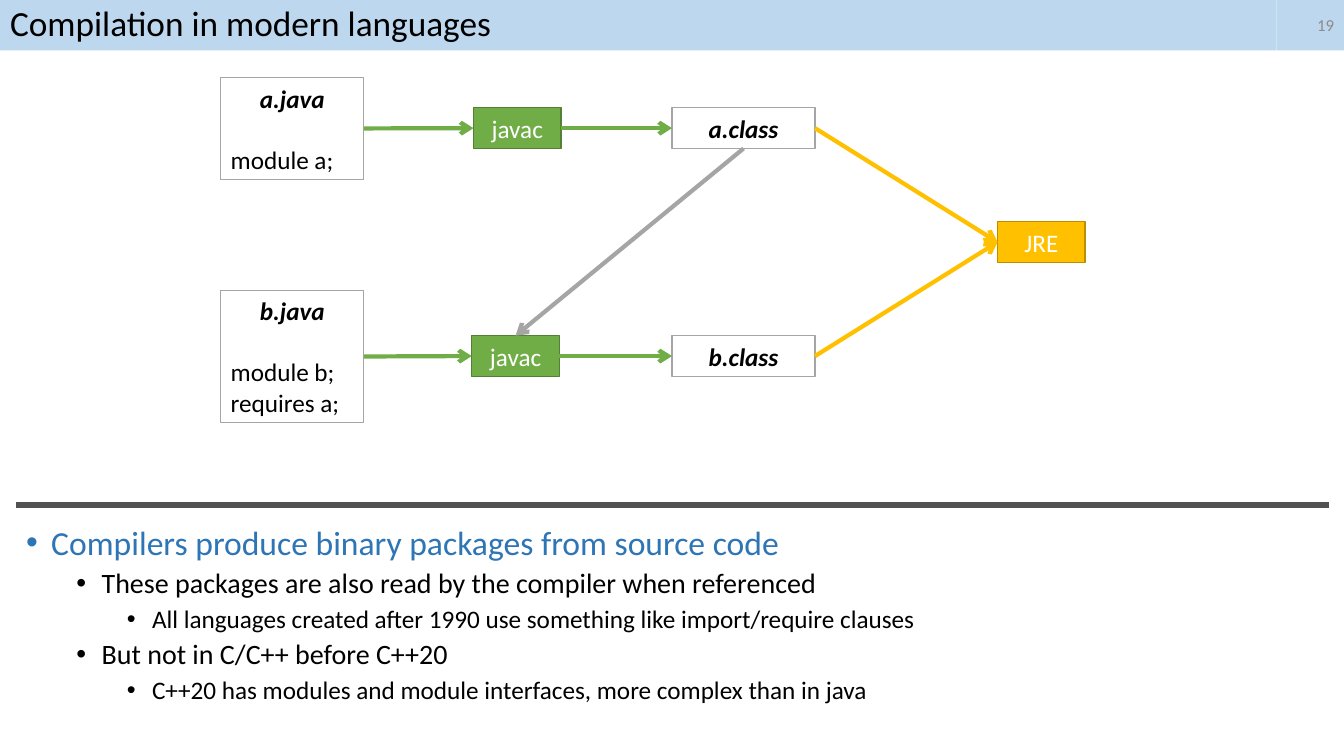
from dataclasses import dataclass

from lxml.etree import SubElement
from pptx import Presentation
from pptx.dml.color import RGBColor
from pptx.enum.shapes import MSO_CONNECTOR as Connector, MSO_SHAPE as Preset
from pptx.enum.text import MSO_ANCHOR as Anchor, MSO_AUTO_SIZE as AutoSize, PP_ALIGN as Align
from pptx.oxml.ns import qn
from pptx.shapes.autoshape import Shape
from pptx.shapes.connector import Connector as Line
from pptx.slide import Slide
from pptx.text.text import TextFrame, _Paragraph as Paragraph
from pptx.util import Pt


@dataclass(frozen=True)
class Theme:
    font: str = "Calibri"
    black: str = "000000"
    white: str = "FFFFFF"
    header: str = "BDD7EE"
    page: str = "8C8C8C"
    divider: str = "525252"
    headline: str = "2E75B6"
    grey: str = "A5A5A5"
    green: str = "70AD47"
    green_edge: str = "538035"
    gold: str = "FFC000"
    gold_edge: str = "BD8E00"
    title_size: float = 25.2
    page_size: float = 12
    node_size: float = 18
    bullet_sizes: tuple[float, ...] = (24, 20, 18)


THEME = Theme()


@dataclass(frozen=True)
class NodeStyle:
    fill: str
    edge: str
    text: str
    width: float
    is_file: bool = False


FILE = NodeStyle(THEME.white, THEME.grey, THEME.black, 102.2, True)
COMPILER = NodeStyle(THEME.green, THEME.green_edge, THEME.white, 62.6)
RUNTIME = NodeStyle(THEME.gold, THEME.gold_edge, THEME.white, 62.6)


@dataclass(frozen=True)
class Node:
    key: str
    label: str
    left: float
    top: float
    style: NodeStyle
    height: float = 29.1
    code: tuple[str, ...] = ()


@dataclass(frozen=True)
class Arrow:
    source: str
    target: str
    color: str
    source_site: int
    target_site: int


@dataclass(frozen=True)
class Bullet:
    level: int
    text: str


TOP, LEFT, BOTTOM, RIGHT = range(4)  # connection sites of a rectangle

NODES = (
    Node("a source", "a.java", 157.7, 55.4, FILE, 72.7, ("module a;",)),
    Node("b source", "b.java", 157.7, 207.4, FILE, 94.5, ("module b;", "requires a;")),
    Node("a compiler", "javac", 338.2, 77, COMPILER),
    Node("b compiler", "javac", 337, 239.8, COMPILER),
    Node("a binary", "a.class", 480, 77, FILE),
    Node("b binary", "b.class", 480, 239.8, FILE),
    Node("runtime", "JRE", 712.6, 158.4, RUNTIME),
)

ARROWS = (
    Arrow("a source", "a compiler", THEME.green, RIGHT, LEFT),
    Arrow("a compiler", "a binary", THEME.green, RIGHT, LEFT),
    Arrow("b source", "b compiler", THEME.green, RIGHT, LEFT),
    Arrow("b compiler", "b binary", THEME.green, RIGHT, LEFT),
    Arrow("a binary", "b compiler", THEME.grey, BOTTOM, TOP),
    Arrow("a binary", "runtime", THEME.gold, RIGHT, LEFT),
    Arrow("b binary", "runtime", THEME.gold, RIGHT, LEFT),
)

BULLETS = (
    Bullet(0, "Compilers produce binary packages from source code"),
    Bullet(1, "These packages are also read by the compiler when referenced"),
    Bullet(2, "All languages created after 1990 use something like import/require clauses"),
    Bullet(1, "But not in C/C++ before C++20"),
    Bullet(2, "C++20 has modules and module interfaces, more complex than in java"),
)


def rgb(color: str) -> RGBColor:
    return RGBColor.from_string(color)


def next_paragraph(frame: TextFrame) -> Paragraph:
    """Return the first paragraph while it is unused, else a new one."""
    first = frame.paragraphs[0]
    return frame.add_paragraph() if first.runs else first


def write(frame: TextFrame, text: str, size: float, color: str,
          align: Align = Align.LEFT, emphasis: bool = False) -> Paragraph:
    paragraph = next_paragraph(frame)
    paragraph.alignment = align
    run = paragraph.add_run()
    run.text = text
    font = run.font
    font.name, font.size = THEME.font, Pt(size)
    font.bold = font.italic = emphasis
    font.color.rgb = rgb(color)
    return paragraph


def place(shape: Shape, left: float, top: float, width: float, height: float) -> None:
    shape.left, shape.top, shape.width, shape.height = map(Pt, (left, top, width, height))


def fill_solid(shape: Shape, color: str) -> None:
    shape.fill.solid()
    shape.fill.fore_color.rgb = rgb(color)


def add_box(slide: Slide, left: float, top: float, width: float, height: float, fill: str) -> Shape:
    box = slide.shapes.add_shape(Preset.RECTANGLE, Pt(left), Pt(top), Pt(width), Pt(height))
    box.shadow.inherit = False
    fill_solid(box, fill)
    box.line.fill.background()
    box.text_frame.word_wrap = True
    box.text_frame.vertical_anchor = Anchor.MIDDLE
    return box


def add_line(slide: Slide, x1: float, y1: float, x2: float, y2: float,
             color: str, weight: float) -> Line:
    line = slide.shapes.add_connector(Connector.STRAIGHT, Pt(x1), Pt(y1), Pt(x2), Pt(y2))
    line.line.color.rgb = rgb(color)
    line.line.width = Pt(weight)
    SubElement(line._element.spPr, qn("a:effectLst"))
    return line


def add_header(slide: Slide) -> None:
    number = add_box(slide, 912, 0, 48, 36, THEME.header)
    write(number.text_frame, "19", THEME.page_size, THEME.page, Align.RIGHT)
    title = slide.shapes.title
    place(title, 0, 0, 912, 36)
    fill_solid(title, THEME.header)
    title.text_frame.auto_size = AutoSize.NONE
    title.text_frame.vertical_anchor = Anchor.MIDDLE
    heading = write(title.text_frame, "Compilation in modern languages", THEME.title_size, THEME.black)
    heading.line_spacing = 0.9


def add_node(slide: Slide, node: Node) -> Shape:
    style = node.style
    box = add_box(slide, node.left, node.top, style.width, node.height, style.fill)
    box.line.color.rgb = rgb(style.edge)
    box.line.width = Pt(1)
    frame = box.text_frame
    frame.auto_size = AutoSize.SHAPE_TO_FIT_TEXT
    write(frame, node.label, THEME.node_size, style.text, Align.CENTER, style.is_file)
    for index, statement in enumerate(node.code):
        paragraph = write(frame, statement, THEME.node_size, style.text)
        paragraph.space_before = Pt(0 if index else 22)
    return box


def add_arrow(slide: Slide, arrow: Arrow, boxes: dict[str, Shape]) -> None:
    line = add_line(slide, 0, 0, 0, 0, arrow.color, 3)
    line.begin_connect(boxes[arrow.source], arrow.source_site)
    line.end_connect(boxes[arrow.target], arrow.target_site)
    SubElement(line.line._get_or_add_ln(), qn("a:tailEnd"), type="arrow")


def add_bullets(slide: Slide) -> None:
    frame = slide.shapes.add_textbox(Pt(11.5), Pt(372.2), Pt(937.4), Pt(136)).text_frame
    frame.word_wrap = True
    for bullet in BULLETS:
        color = THEME.black if bullet.level else THEME.headline
        paragraph = write(frame, bullet.text, THEME.bullet_sizes[bullet.level], color)
        paragraph.level = bullet.level
        paragraph.line_spacing = 0.9
        paragraph.space_before = Pt(5 if bullet.level else 10)
        properties = paragraph._p.get_or_add_pPr()
        properties.set("marL", str(Pt(18 + 36 * bullet.level)))
        properties.set("indent", str(Pt(-18)))
        SubElement(properties, qn("a:buFont"), typeface="Arial")
        SubElement(properties, qn("a:buChar"), char="•")


def main() -> None:
    deck = Presentation()
    deck.slide_width, deck.slide_height = Pt(960), Pt(540)
    slide = deck.slides.add_slide(deck.slide_layouts.get_by_name("Title Only"))
    add_header(slide)
    add_line(slide, 11.5, 360.7, 949, 360.7, THEME.divider, 4)
    add_bullets(slide)
    boxes = {node.key: add_node(slide, node) for node in NODES}
    for arrow in ARROWS:
        add_arrow(slide, arrow, boxes)
    deck.save("out.pptx")


if __name__ == "__main__":
    main()
